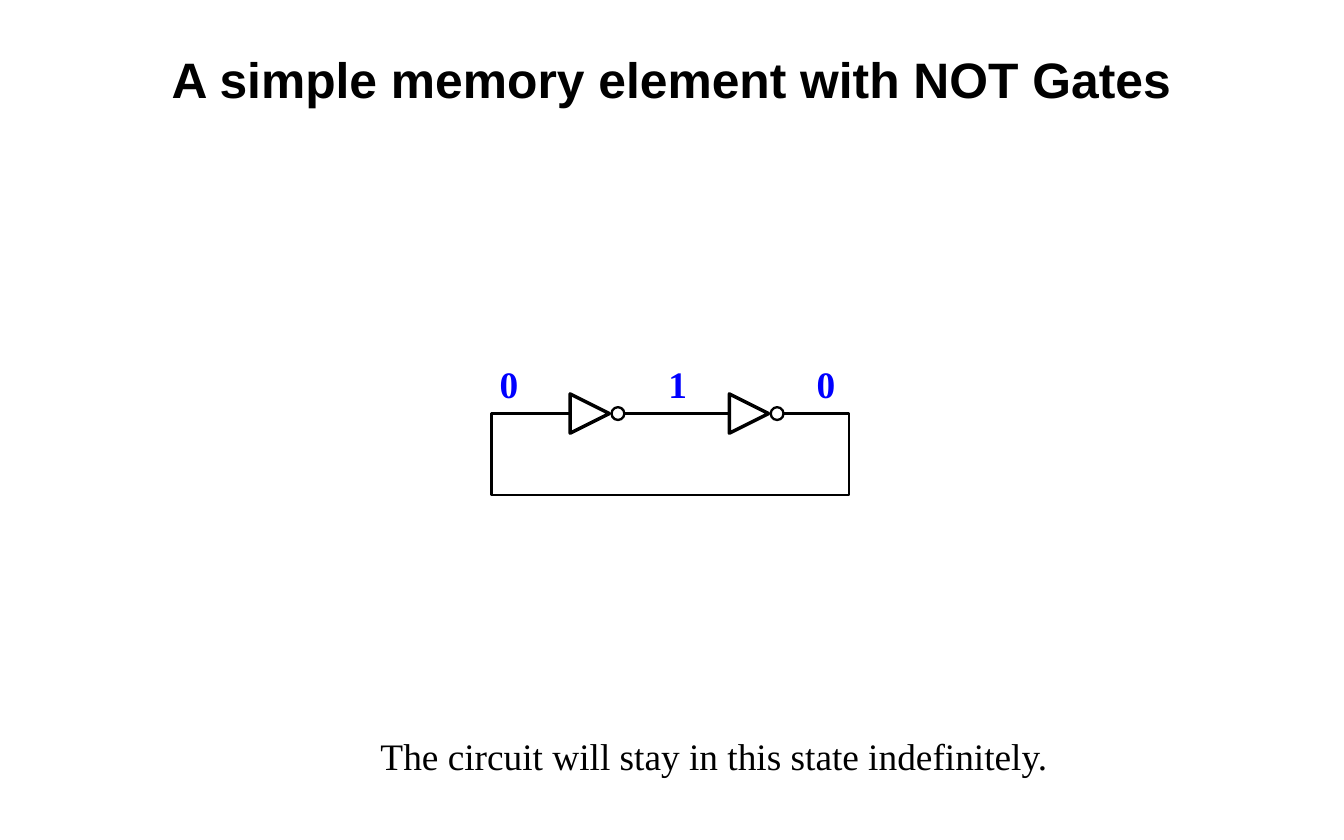
from lxml import etree
from pptx import Presentation
from pptx.dml.color import RGBColor
from pptx.enum import shapes, text
from pptx.oxml import ns
from pptx.util import Cm, Pt

COLORS = {"ink": "000000", "signal": "0000FF", "paper": "FFFFFF"}
GATE_SIDE = 0.89
BUBBLE_OFFSET = 0.94
BUBBLE_SIZE = 0.29


def color(name):
    return RGBColor.from_string(COLORS[name])


def add_text(slide, box, wording, size, font, ink="ink", bold=False, inset=None, wrap=False):
    label = slide.shapes.add_textbox(*map(Cm, box))
    frame = label.text_frame
    frame.word_wrap = wrap
    if inset is not None:
        frame.margin_left = frame.margin_right = Cm(inset)
        frame.margin_top = frame.margin_bottom = Cm(inset)
    frame.text = wording
    run_font = frame.paragraphs[0].runs[0].font
    run_font.size, run_font.name, run_font.bold = Pt(size), font, bold
    run_font.color.rgb = color(ink)
    return frame


def add_outline(slide, points, weight, close=False):
    corners = [(Cm(x), Cm(y)) for x, y in points]
    builder = slide.shapes.build_freeform(*corners[0])
    builder.add_line_segments(corners[1:], close=close)
    outline = builder.convert_to_shape()
    outline.shadow.inherit = False
    outline.fill.background()
    outline.line.color.rgb = color("ink")
    outline.line.width = Pt(weight)


def add_title(slide, box):
    frame = add_text(slide, box, "A simple memory element with NOT Gates",
                     32, "Arial", bold=True, wrap=True)
    frame.vertical_anchor = text.MSO_ANCHOR.MIDDLE
    frame.paragraphs[0].alignment = text.PP_ALIGN.CENTER


def add_not_gate(slide, left, axis):
    """Triangle with an inverting bubble, centred on the wire axis."""
    half = GATE_SIDE / 2
    add_outline(slide, [(left + GATE_SIDE, axis), (left, axis + half), (left, axis - half)],
                2.25, close=True)
    bubble = slide.shapes.add_shape(
        shapes.MSO_SHAPE.OVAL, Cm(left + BUBBLE_OFFSET), Cm(axis - BUBBLE_SIZE / 2),
        Cm(BUBBLE_SIZE), Cm(BUBBLE_SIZE))
    bubble.shadow.inherit = False
    bubble.fill.solid()
    bubble.fill.fore_color.rgb = color("paper")
    bubble.line.color.rgb = color("ink")
    bubble.line.width = Pt(1.5)


def add_circuit(slide, box):
    """Two NOT gates on the top edge of the box, the feedback loop around it."""
    left, axis, width, height = box
    right, bottom = left + width, axis + height
    first_gate, second_gate = left + 1.78, left + 5.39
    output_offset = BUBBLE_OFFSET + BUBBLE_SIZE

    # Wire between the gates
    link = slide.shapes.add_connector(
        shapes.MSO_CONNECTOR.STRAIGHT, Cm(second_gate), Cm(axis),
        Cm(first_gate + output_offset), Cm(axis))
    link.line.color.rgb = color("ink")
    link.line.width = Pt(1.5)
    etree.SubElement(link.element.spPr, ns.qn("a:effectLst"))

    # Gates
    for gate_left in (first_gate, second_gate):
        add_not_gate(slide, gate_left, axis)

    # Feedback loop from the second output to the first input
    add_outline(slide, [(first_gate, axis), (left, axis), (left, bottom), (right, bottom),
                        (right, axis), (second_gate + output_offset, axis)], 1.5)

    # Signal values
    for value, offset in (("0", 0.18), ("1", 4.01), ("0", 7.37)):
        add_text(slide, (left + offset, axis - 1.19, 0.56, 1.02), value, 24,
                 "Times New Roman", ink="signal", bold=True, inset=0)


def add_caption(slide, box):
    add_text(slide, box, "The circuit will stay in this state indefinitely.",
             24, "Times New Roman")


def main():
    deck = Presentation()
    deck.slide_width, deck.slide_height = Cm(30.48), Cm(19.05)
    slide = deck.slides.add_slide(deck.slide_layouts[6])
    add_title(slide, (2.54, 0.84, 25.4, 1.9))
    add_circuit(slide, (11.15, 9.38, 8.11, 1.84))
    add_caption(slide, (8.38, 16.51, 15.75, 1.3))
    deck.save("out.pptx")


if __name__ == "__main__":
    main()
